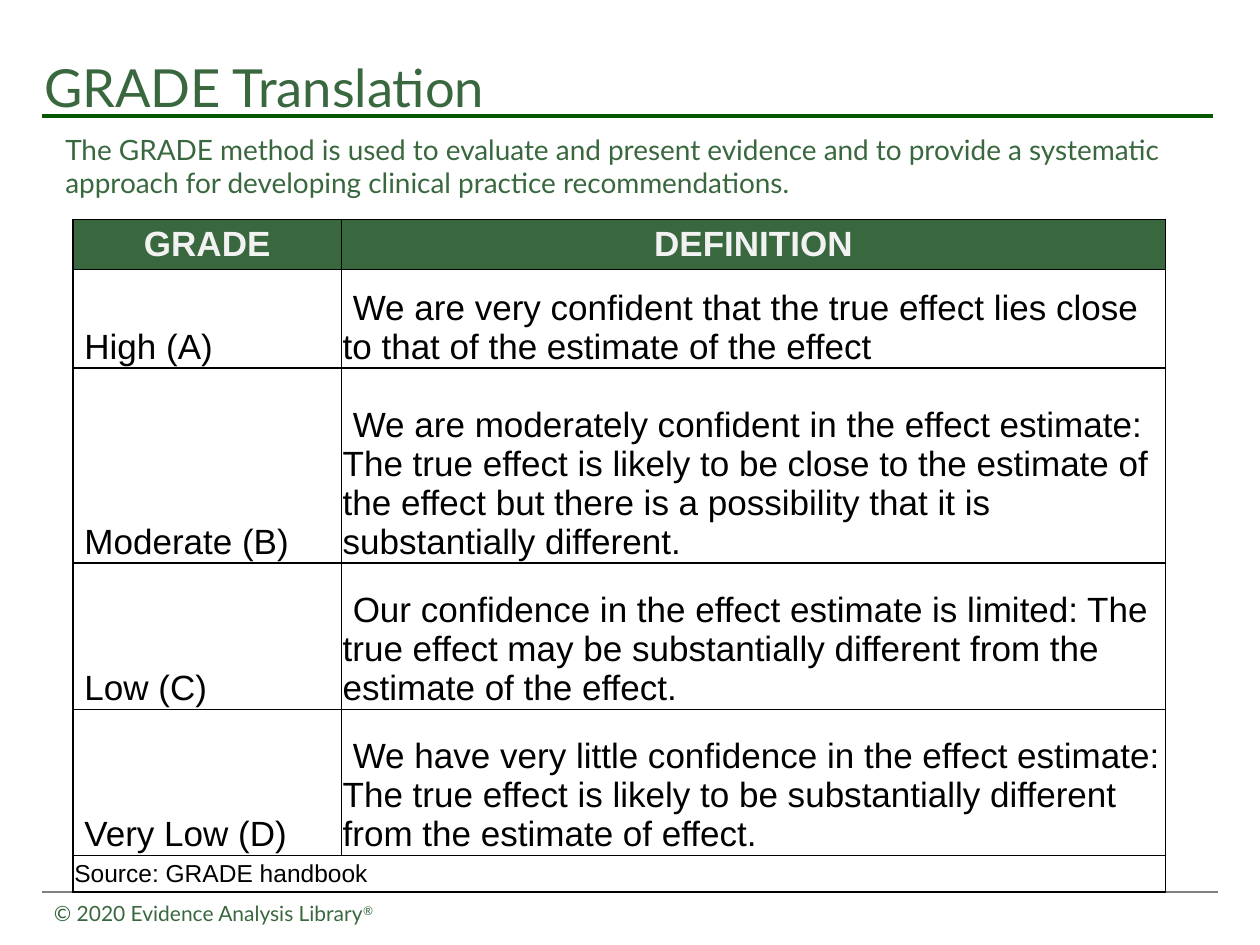
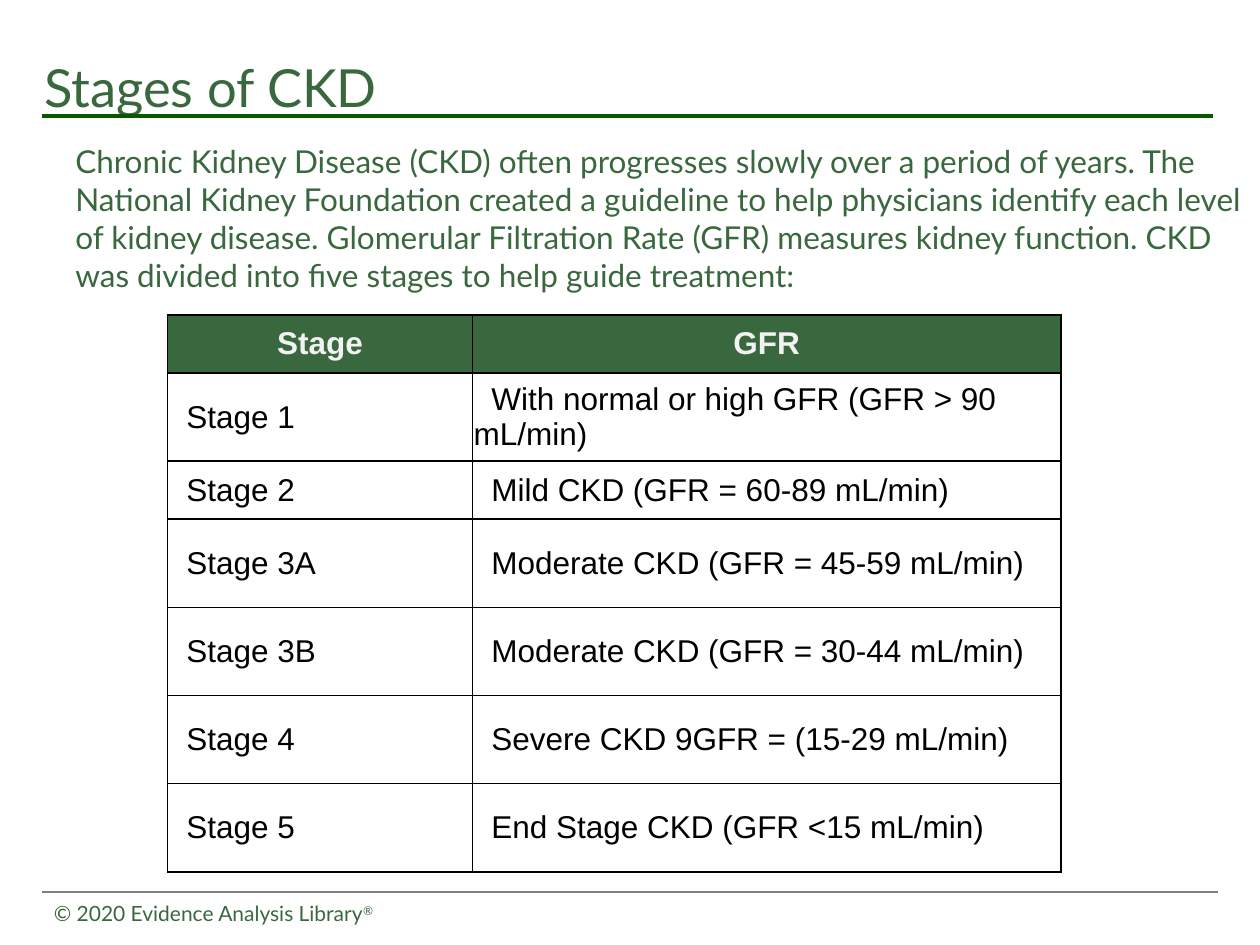
import pptx
import pptx.dml.color
import pptx.enum.shapes
import pptx.enum.text
import pptx.oxml.ns
import pptx.util
from lxml import etree

Inches = pptx.util.Inches
Pt = pptx.util.Pt
Align = pptx.enum.text.PP_ALIGN
Anchor = pptx.enum.text.MSO_ANCHOR
qn = pptx.oxml.ns.qn


def rgb(code):
    return pptx.dml.color.RGBColor.from_string(code)


# Shared theme
theme = {
    "green": "39683E", "rule": "065901", "gray": "808080",
    "pale": "F2F2F2", "black": "000000",
    "heading_font": "Lato", "table_font": "Arial",
    "title_size": 30, "footer_size": 12, "source_size": 14,
}
rules = [  # left, right, y, colour, width
    (0.33, 9.67, 7.08, theme["gray"], 1),
    (0.33, 9.63, 0.92, theme["rule"], 2.25),
]


def write(para, text, size, name, color, bold=False):
    span = para.add_run()
    span.text = text
    formats = {"size": Pt(size), "name": name, "bold": bold}
    for key, value in formats.items():
        setattr(span.font, key, value)
    span.font.color.rgb = rgb(color)
    return span


# Slide content
pages = [
    {
        "title": "GRADE Translation",
        "intro": "The GRADE method is used to evaluate and present evidence and to provide "
                 "a systematic approach for developing clinical practice recommendations.",
        "intro_at": (0.42, 1, 9.17, 1.25), "intro_size": 16,
        "table_at": (0.58, 1.74), "columns": (2.13, 6.54),
        "heights": (0.4, 0.78, 1.55, 1.16, 1.16, 0.29),
        "size": 20, "indent": 0.08, "anchor": Anchor.BOTTOM,
        "rows": [
            ("GRADE", "DEFINITION"),
            ("High (A)", "We are very confident that the true effect lies close to that of "
                         "the estimate of the effect"),
            ("Moderate (B)", "We are moderately confident in the effect estimate: The true "
                             "effect is likely to be close to the estimate of the effect but "
                             "there is a possibility that it is substantially different."),
            ("Low (C)", "Our confidence in the effect estimate is limited: The true effect "
                        "may be substantially different from the estimate of the effect."),
            ("Very Low (D)", "We have very little confidence in the effect estimate: The true "
                             "effect is likely to be substantially different from the "
                             "estimate of effect."),
            ("Source: GRADE handbook",),
        ],
    },
    {
        "title": "Stages of CKD",
        "intro": "Chronic Kidney Disease (CKD) often progresses slowly over a period of years. "
                 "The National Kidney Foundation created a guideline to help physicians "
                 "identify each level of kidney disease. Glomerular Filtration Rate (GFR) "
                 "measures kidney function. CKD was divided into five stages to help guide "
                 "treatment:",
        "intro_at": (0.5, 1.08, 9.5, 1.42), "intro_size": 18,
        "table_at": (1.33, 2.5), "columns": (2.42, 4.67),
        "heights": (0.46, 0.7, 0.46, 0.7, 0.7, 0.7, 0.7),
        "size": 18, "indent": 0.14, "anchor": Anchor.MIDDLE,
        "rows": [
            ("Stage", "GFR"),
            ("Stage 1", "With normal or high GFR (GFR > 90 mL/min)"),
            ("Stage 2", "Mild CKD (GFR = 60-89 mL/min)"),
            ("Stage 3A", "Moderate CKD (GFR = 45-59 mL/min)"),
            ("Stage 3B", "Moderate CKD (GFR = 30-44 mL/min)"),
            ("Stage 4", "Severe CKD 9GFR = (15-29 mL/min)"),
            ("Stage 5", "End Stage CKD (GFR <15 mL/min)"),
        ],
    },
]

deck = pptx.Presentation()
deck.slide_width, deck.slide_height = Inches(10), Inches(7.5)

for content in pages:
    page = deck.slides.add_slide(deck.slide_layouts[5])

    # Rules above the footer and under the title
    for left, right, y, color, width in rules:
        rule = page.shapes.add_connector(
            pptx.enum.shapes.MSO_CONNECTOR.STRAIGHT,
            Inches(left), Inches(y), Inches(right), Inches(y))
        rule.line.color.rgb = rgb(color)
        rule.line.width = Pt(width)
        etree.SubElement(rule._element.spPr, qn("a:effectLst"))

    # Title
    title = page.shapes.title
    title.left, title.top, title.width, title.height = map(Inches, (0.25, 0.38, 9, 0.62))
    title.text_frame.auto_size = pptx.enum.text.MSO_AUTO_SIZE.NONE
    title.text_frame.vertical_anchor = Anchor.MIDDLE
    para = title.text_frame.paragraphs[0]
    para.alignment = Align.LEFT
    write(para, content["title"], theme["title_size"], theme["heading_font"], theme["green"])

    # Introduction
    box = page.shapes.add_textbox(*map(Inches, content["intro_at"]))
    box.text_frame.word_wrap = True
    write(box.text_frame.paragraphs[0], content["intro"], content["intro_size"],
          theme["heading_font"], theme["green"])

    # Table
    rows, columns, heights = content["rows"], content["columns"], content["heights"]
    frame = page.shapes.add_table(
        len(rows), len(columns), *map(Inches, content["table_at"]),
        Inches(sum(columns)), Inches(sum(heights)))
    table = frame.table
    table.horz_banding = False
    for column, width in zip(table.columns, columns):
        column.width = Inches(width)
    for row, height in zip(table.rows, heights):
        row.height = Inches(height)

    for r, texts in enumerate(rows):
        is_header, is_source = r == 0, len(texts) == 1
        if is_source:
            table.cell(r, 0).merge(table.cell(r, len(columns) - 1))
        for c in range(len(columns)):
            cell = table.cell(r, c)
            for side in ("left", "top", "right", "bottom"):
                setattr(cell, "margin_" + side, Inches(0.01))
            cell.vertical_anchor = Anchor.MIDDLE if is_header or is_source else content["anchor"]
            properties = cell._tc.get_or_add_tcPr()
            for edge in ("a:lnL", "a:lnR", "a:lnT", "a:lnB"):
                border = etree.SubElement(properties, qn(edge), w=str(Pt(1)))
                fill = etree.SubElement(border, qn("a:solidFill"))
                etree.SubElement(fill, qn("a:srgbClr"), val=theme["black"])
            if is_header:
                cell.fill.solid()
                cell.fill.fore_color.rgb = rgb(theme["green"])
            else:
                cell.fill.background()
            if c >= len(texts):
                continue
            para = cell.text_frame.paragraphs[0]
            if is_header:
                para.alignment = Align.CENTER
            elif not is_source:
                para._p.get_or_add_pPr().set("indent", str(Inches(content["indent"])))
            write(para, texts[c], theme["source_size"] if is_source else content["size"],
                  theme["table_font"], theme["pale"] if is_header else theme["black"], is_header)

    # Footer
    footer = page.shapes.add_textbox(*map(Inches, (0.33, 7.1, 2.8, 0.3)))
    footer.text_frame.word_wrap = False
    footer.text_frame.auto_size = pptx.enum.text.MSO_AUTO_SIZE.SHAPE_TO_FIT_TEXT
    for text, baseline in (("© 2020 Evidence Analysis Library", 0), ("®", 30000)):
        span = write(footer.text_frame.paragraphs[0], text, theme["footer_size"],
                     theme["heading_font"], theme["green"])
        span._r.get_or_add_rPr().set("baseline", str(baseline))

deck.save("out.pptx")
